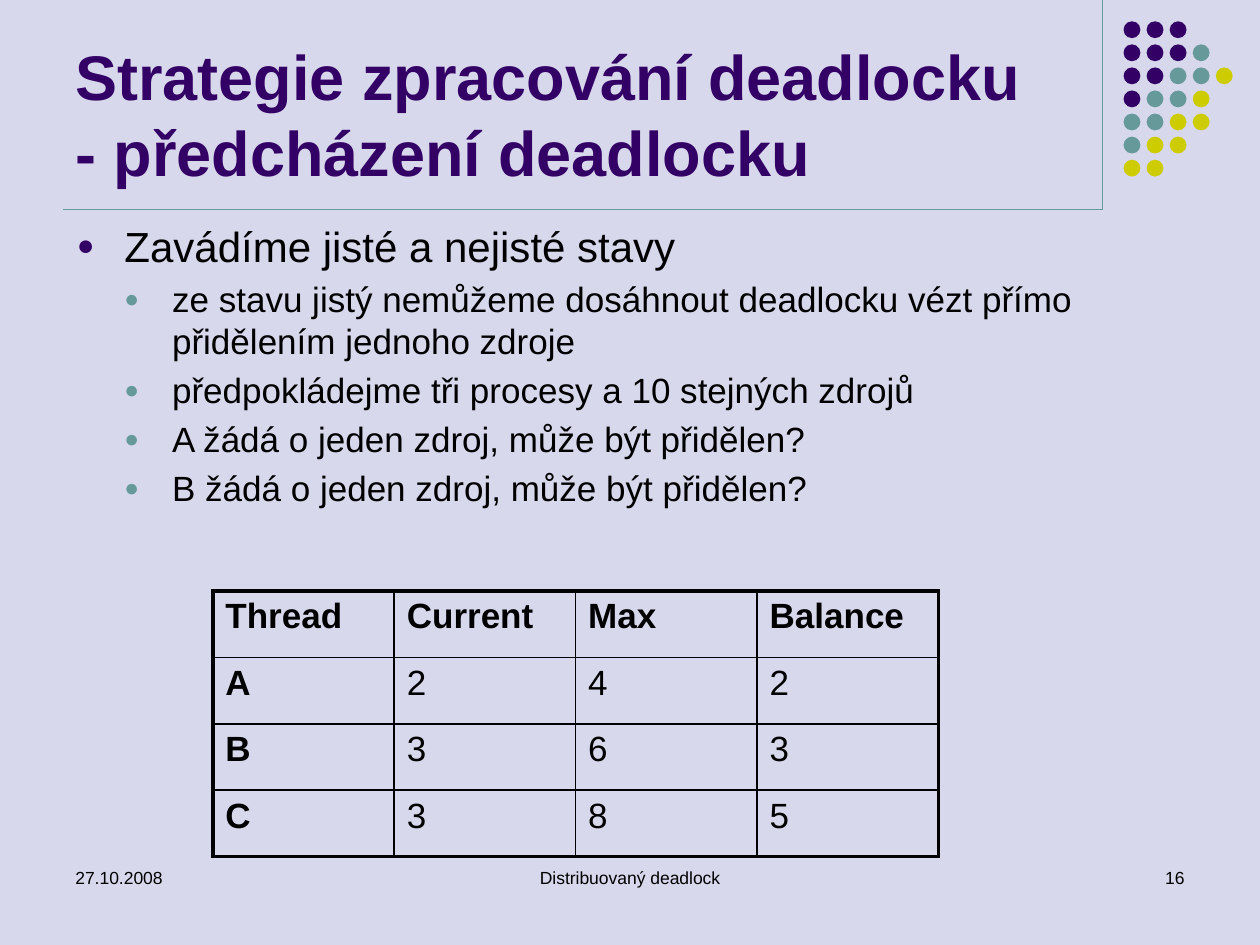
from dataclasses import dataclass

from lxml import etree
from pptx import Presentation
from pptx.dml.color import RGBColor
from pptx.enum.shapes import MSO_CONNECTOR, MSO_SHAPE
from pptx.enum.text import MSO_ANCHOR, PP_ALIGN
from pptx.oxml.ns import qn
from pptx.util import Cm, Pt

LINE = MSO_CONNECTOR.STRAIGHT
OVAL = MSO_SHAPE.OVAL
TOP, LOW = MSO_ANCHOR.TOP, MSO_ANCHOR.BOTTOM
LEFT, MID, RIGHT = PP_ALIGN.LEFT, PP_ALIGN.CENTER, PP_ALIGN.RIGHT


@dataclass(frozen=True)
class Theme:
    font: str = "Arial"
    back: str = "D8D8EC"
    ink: str = "000000"
    dark: str = "330066"
    teal: str = "669999"
    lime: str = "CCCC00"
    title: int = 36
    lead: int = 24
    body: int = 20
    foot: int = 10
    thin: float = 1
    thick: float = 2.25


def rgb(code):
    return RGBColor.from_string(code)


def write(par, text, *, font, size, color, bold=False, align=LEFT, gap=0):
    par.text = text
    par.alignment = align
    par.space_before = Pt(gap)
    for run in par.runs:
        run.font.name = font
        run.font.size = Pt(size)
        run.font.bold = bold
        run.font.color.rgb = rgb(color)


class Deck:
    def __init__(self, style, slide):
        self.style = style
        self.slide = slide
        fill = slide.background.fill
        fill.solid()
        fill.fore_color.rgb = rgb(style.back)

    def rule(self, x1, y1, x2, y2):
        line = self.slide.shapes.add_connector(LINE, Cm(x1), Cm(y1), Cm(x2), Cm(y2))
        line.line.color.rgb = rgb(self.style.teal)
        line.line.width = Pt(0.75)
        etree.SubElement(line.line._get_or_add_ln().getparent(), qn("a:effectLst"))

    def dot(self, x, y, size, color):
        dot = self.slide.shapes.add_shape(OVAL, Cm(x), Cm(y), Cm(size), Cm(size))
        dot.shadow.inherit = False
        dot.fill.solid()
        dot.fill.fore_color.rgb = rgb(color)
        dot.line.fill.background()

    def frame(self, x, y, w, h, anchor=TOP):
        box = self.slide.shapes.add_textbox(Cm(x), Cm(y), Cm(w), Cm(h))
        frame = box.text_frame
        frame.word_wrap = True
        frame.vertical_anchor = anchor
        return frame

    def label(self, x, y, w, h, text, anchor=TOP, **form):
        par = self.frame(x, y, w, h, anchor).paragraphs[0]
        write(par, text, font=self.style.font, **form)

    def bullet(self, par, level, color):
        par.level = level
        props = par._p.get_or_add_pPr()
        props.set("marL", str(Cm(0.96 * (level + 1))))
        props.set("indent", str(Cm(-0.96)))
        tint = etree.SubElement(props, qn("a:buClr"))
        etree.SubElement(tint, qn("a:srgbClr"), val=color)
        etree.SubElement(props, qn("a:buSzPct"), val="70000")
        etree.SubElement(props, qn("a:buFont"), typeface=self.style.font)
        etree.SubElement(props, qn("a:buChar"), char="●")

    def points(self, x, y, w, h, items):
        style = self.style
        looks = ((style.lead, style.dark), (style.body, style.teal))
        frame = self.frame(x, y, w, h)
        for i, (level, text) in enumerate(items):
            par = frame.add_paragraph() if i else frame.paragraphs[0]
            size, color = looks[level]
            write(par, text, font=style.font, size=size, color=style.ink, gap=size / 5)
            self.bullet(par, level, color)

    def edge(self, cell, outer):
        style = self.style
        props = cell._tc.get_or_add_tcPr()
        for i, (side, out) in enumerate(outer.items()):
            width = Pt(style.thick if out else style.thin)
            line = etree.Element(qn(f"a:ln{side}"), w=str(width))
            fill = etree.SubElement(line, qn("a:solidFill"))
            etree.SubElement(fill, qn("a:srgbClr"), val=style.ink)
            props.insert(i, line)

    def table(self, x, y, w, h, data):
        style = self.style
        rows, cols = len(data), len(data[0])
        grid = self.slide.shapes.add_table(rows, cols, Cm(x), Cm(y), Cm(w), Cm(h)).table
        for r, row in enumerate(data):
            for c, text in enumerate(row):
                cell = grid.cell(r, c)
                cell.fill.background()
                write(cell.text_frame.paragraphs[0], text, font=style.font,
                      size=style.body, color=style.ink, bold=r == 0 or c == 0,
                      gap=style.body / 5)
                self.edge(cell, {"L": c == 0, "R": c == cols - 1,
                                 "T": r == 0, "B": r == rows - 1})


def main():
    show = Presentation()
    show.slide_width, show.slide_height = Cm(25.4), Cm(19.05)
    style = Theme()
    deck = Deck(style, show.slides.add_slide(show.slide_layouts[6]))

    deck.rule(22.23, 0, 22.23, 4.23)
    deck.rule(1.27, 4.23, 22.23, 4.23)
    hues = {"D": style.dark, "T": style.teal, "L": style.lime}
    for r, row in enumerate(("DDD", "DDDT", "DDTTL", "DTTL", "TTLL", "TLL", "LL")):
        for c, key in enumerate(row):
            deck.dot(22.65 + 0.465 * c, 0.43 + 0.465 * r, 0.34, hues[key])

    foot = {"size": style.foot, "color": style.ink}
    deck.label(1.27, 17.36, 5.93, 1.27, "27.10.2008", **foot)
    deck.label(8.68, 17.36, 8.04, 1.27, "Distribuovaný deadlock", align=MID, **foot)
    deck.label(18.2, 17.36, 5.93, 1.27, "16", align=RIGHT, **foot)
    deck.label(1.27, 0.33, 20.96, 3.6,
               "Strategie zpracování deadlocku\n- předcházení deadlocku",
               anchor=LOW, size=style.title, color=style.dark, bold=True)
    deck.points(1.3, 4.32, 22.43, 7.4, (
        (0, "Zavádíme jisté a nejisté stavy"),
        (1, "ze stavu jistý nemůžeme dosáhnout deadlocku vézt přímo přidělením jednoho zdroje"),
        (1, "předpokládejme tři procesy a 10 stejných zdrojů"),
        (1, "A žádá o jeden zdroj, může být přidělen?"),
        (1, "B žádá o jeden zdroj, může být přidělen?"),
    ))
    deck.table(4.29, 11.91, 14.63, 5.36, (
        ("Thread", "Current", "Max", "Balance"),
        ("A", "2", "4", "2"),
        ("B", "3", "6", "3"),
        ("C", "3", "8", "5"),
    ))
    show.save("out.pptx")


if __name__ == "__main__":
    main()
